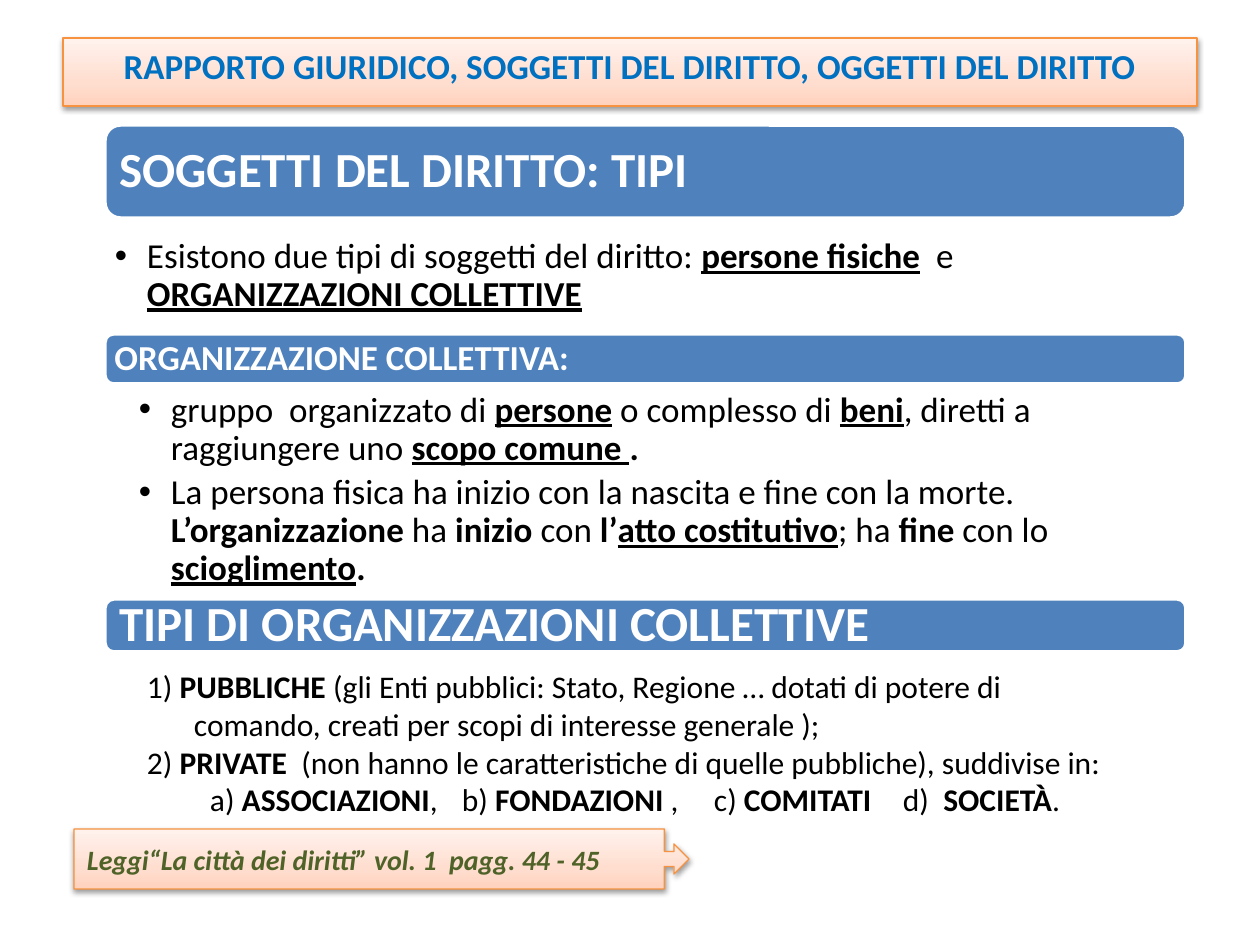
import copy
from dataclasses import dataclass

import pptx
import pptx.dml.color
import pptx.enum.shapes
import pptx.enum.text
import pptx.oxml
import pptx.oxml.ns
import pptx.util

SHAPE = pptx.enum.shapes.MSO_SHAPE
ANCHOR = pptx.enum.text.MSO_ANCHOR
ALIGN = pptx.enum.text.PP_ALIGN
DRAWING_NS = pptx.oxml.ns.nsdecls("a")


@dataclass(frozen=True)
class Theme:
    font: str = "Calibri"
    white: str = "FFFFFF"
    black: str = "000000"
    blue: str = "0070C0"
    green: str = "4F6228"
    banner: str = "4F81BD"
    orange: str = "F69240"
    gradient: tuple = ((0, "FFD2BD"), (0.35, "FFDED0"), (1, "FFF2ED"))
    heading: int = 28
    body: int = 20
    detail: int = 18
    note: int = 16


THEME = Theme()


def px(n):
    return pptx.util.Emu(round(n * 914400 / 126))


def rgb(value):
    return pptx.dml.color.RGBColor.from_string(value)


def format_run(r, size, color, style=""):
    r.font.name = THEME.font
    r.font.size = pptx.util.Pt(size)
    r.font.color.rgb = rgb(color)
    r.font.bold = "b" in style
    r.font.italic = "i" in style
    r.font.underline = "u" in style


def set_frame(tf, anchor, insets):
    tf.word_wrap = True
    tf.vertical_anchor = anchor
    tf.margin_left, tf.margin_top, tf.margin_right, tf.margin_bottom = map(px, insets)


def set_indent(p, left, first):
    pPr = p._p.get_or_add_pPr()
    pPr.set("marL", str(px(left)))
    pPr.set("indent", str(px(first)))
    return pPr


def add_bullet(p):
    pPr = set_indent(p, 32, -32)
    pPr.append(pptx.oxml.parse_xml(f'<a:buFont {DRAWING_NS} typeface="Arial"/>'))
    pPr.append(pptx.oxml.parse_xml(f'<a:buChar {DRAWING_NS} char="•"/>'))
    p.line_spacing = 0.9
    p.space_after = pptx.util.Pt(4)


def add_tabs(p, positions):
    stops = "".join(f'<a:tab pos="{px(n)}" algn="l"/>' for n in positions)
    xml = f"<a:tabLst {DRAWING_NS}>{stops}</a:tabLst>"
    p._p.get_or_add_pPr().append(pptx.oxml.parse_xml(xml))


def fill_paragraph(p, parts, size):
    for text, style in parts:
        r = p.add_run()
        r.text = text
        format_run(r, size, THEME.black, style)


def add_text(slide, box, anchor, insets):
    tf = slide.shapes.add_textbox(*map(px, box)).text_frame
    set_frame(tf, anchor, insets)
    return tf


def add_paragraphs(tf, count):
    return [tf.paragraphs[0]] + [tf.add_paragraph() for _ in range(count - 1)]


def add_bullets(slide, box, insets, items):
    tf = add_text(slide, box, ANCHOR.BOTTOM, insets)
    for p, parts in zip(add_paragraphs(tf, len(items)), items):
        add_bullet(p)
        fill_paragraph(p, parts, THEME.body)


def add_banner(slide, top, height, inset, text, size):
    s = slide.shapes.add_shape(SHAPE.ROUNDED_RECTANGLE, *map(px, (105, top, 1081, height)))
    s.shadow.inherit = False
    s.fill.solid()
    s.fill.fore_color.rgb = rgb(THEME.banner)
    s.line.color.rgb = rgb(THEME.white)
    s.line.width = pptx.util.Pt(2)
    set_frame(s.text_frame, ANCHOR.MIDDLE, (inset, 0, inset, 0))
    s.text_frame.text = text
    p = s.text_frame.paragraphs[0]
    p.alignment = ALIGN.LEFT
    p.line_spacing = 0.9
    format_run(p.runs[0], size, THEME.white, "b")


def add_gradient(s):
    s.fill.gradient()
    s.fill.gradient_angle = 90
    stop_list = s._element.spPr.find(".//" + pptx.oxml.ns.qn("a:gsLst"))
    stop_list.insert(1, copy.deepcopy(stop_list[0]))
    for stop, (position, color) in zip(s.fill.gradient_stops, THEME.gradient):
        stop.position = position
        stop.color.rgb = rgb(color)


def add_shadow(s):
    s.shadow.inherit = False
    effects = s._element.spPr.find(pptx.oxml.ns.qn("a:effectLst"))
    effects.append(pptx.oxml.parse_xml(
        f'<a:outerShdw {DRAWING_NS} blurRad="40000" dist="20000" dir="5400000" rotWithShape="0">'
        f'<a:srgbClr val="{THEME.black}"><a:alpha val="38000"/></a:srgbClr></a:outerShdw>'))


def add_panel(slide, kind, box, text, size, color, style, align, anchor):
    s = slide.shapes.add_shape(kind, *map(px, box))
    add_gradient(s)
    s.line.color.rgb = rgb(THEME.orange)
    s.line.width = pptx.util.Pt(0.75)
    add_shadow(s)
    set_frame(s.text_frame, anchor, (13, 6, 13, 6))
    s.text_frame.text = text
    p = s.text_frame.paragraphs[0]
    p.alignment = align
    format_run(p.runs[0], size, color, style)
    return s


def add_types(slide):
    lines = [
        [("1) ", ""), ("PUBBLICHE", "b"),
         (" (gli Enti pubblici: Stato, Regione … dotati di potere di comando, "
          "creati per scopi di interesse generale );", "")],
        [("2) ", ""), ("PRIVATE", "b"),
         ("  (non hanno le caratteristiche di quelle pubbliche), suddivise in:", "")],
        [("a) ", ""), ("ASSOCIAZIONI", "b"), (",\tb) ", ""), ("FONDAZIONI", "b"),
         (" ,\tc) ", ""), ("COMITATI", "b"), ("\td)  ", ""), ("SOCIETÀ", "b"), (".", "")],
    ]
    tf = add_text(slide, (134, 661, 1012, 204), ANCHOR.TOP, (13, 6, 13, 6))
    paragraphs = add_paragraphs(tf, len(lines))
    for p in paragraphs[:2]:
        set_indent(p, 47, -47)
    set_indent(paragraphs[2], 0, 63)
    add_tabs(paragraphs[2], (327, 586, 786))
    for p, parts in zip(paragraphs, lines):
        fill_paragraph(p, parts, THEME.detail)


def main():
    prs = pptx.Presentation()
    prs.slide_width, prs.slide_height = px(1260), px(945)
    slide = prs.slides.add_slide(prs.slide_layouts[6])

    add_panel(slide, SHAPE.RECTANGLE, (63, 38, 1134, 68),
              "RAPPORTO GIURIDICO, SOGGETTI DEL DIRITTO, OGGETTI DEL DIRITTO",
              THEME.body, THEME.blue, "b", ALIGN.CENTER, ANCHOR.TOP)
    callout = add_panel(slide, SHAPE.RIGHT_ARROW_CALLOUT, (74, 829, 615, 60),
                        "Leggi“La città dei diritti” vol. 1  pagg. 44 - 45",
                        THEME.note, THEME.green, "bi", ALIGN.LEFT, ANCHOR.MIDDLE)
    for i, value in enumerate((0.25, 0.25, 0.25, 0.96)):
        callout.adjustments[i] = value

    add_banner(slide, 125, 93, 10, "SOGGETTI DEL DIRITTO: TIPI", THEME.heading)
    add_bullets(slide, (105, 244, 1081, 80), (10, 10, 10, 10), [
        [("Esistono due tipi di soggetti del diritto: ", ""), ("persone fisiche", "bu"),
         ("  e ", ""), ("ORGANIZZAZIONI COLLETTIVE", "bu")],
    ])
    add_banner(slide, 334, 50, 7, "ORGANIZZAZIONE COLLETTIVA:", THEME.body)
    add_bullets(slide, (105, 383, 1081, 209), (34, 4, 20, 4), [
        [("gruppo  organizzato di ", ""), ("persone", "bu"), (" o complesso di ", ""),
         ("beni", "bu"), (", diretti a raggiungere uno ", ""), ("scopo comune ", "bu"),
         (".", "b")],
        [("La persona fisica ha inizio con la nascita e fine con la morte. ", ""),
         ("L’organizzazione", "b"), (" ha ", ""), ("inizio", "b"), (" con ", ""),
         ("l’", "b"), ("atto costitutivo", "bu"), ("; ha ", ""), ("fine", "b"),
         (" con lo ", ""), ("scioglimento", "bu"), (".", "b")],
    ])
    add_banner(slide, 599, 53, 12, "TIPI DI ORGANIZZAZIONI COLLETTIVE", THEME.heading)
    add_types(slide)

    prs.save("out.pptx")


if __name__ == "__main__":
    main()
